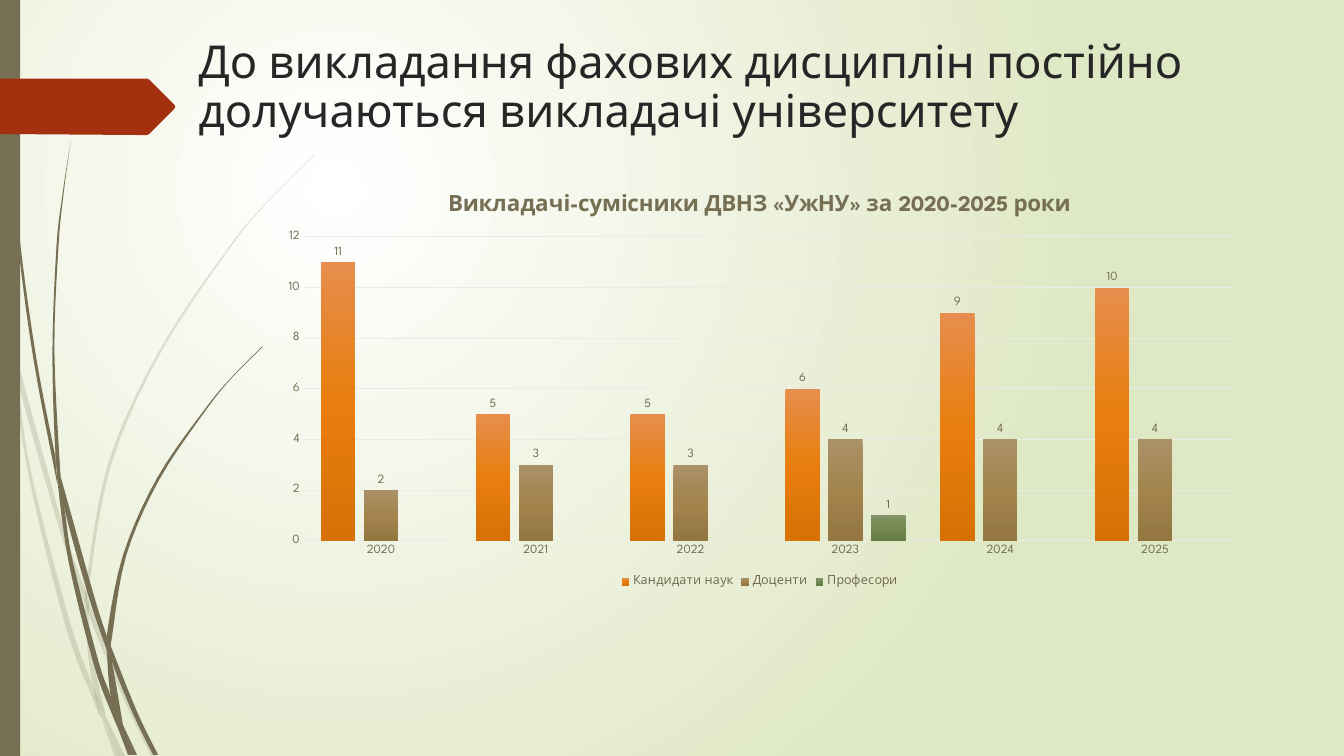
from dataclasses import dataclass

import lxml.etree
import pptx
import pptx.chart.data
import pptx.dml.color
import pptx.enum.chart
import pptx.enum.shapes
import pptx.enum.text
import pptx.oxml
import pptx.oxml.ns
import pptx.util
from pptx.util import Cm, Pt

COLORS = {
    "olive": "766F54",
    "red": "A53010",
    "title": "262626",
    "grid": "ECEAE4",
}
FONT = "League Spartan"
CM_PER_INCH = 2.54
CURVE_STEPS = 5
BACKGROUND_STOPS = {0: "FFFFFF", 100: "DFE8C4"}

Point = tuple[float, float]


@dataclass
class Blade:
    """One piece of a grass blade: its two long edges, in inches, as a loop."""
    outward: list[Point]
    back: list[Point]


@dataclass
class StaffSeries:
    name: str
    values: list[int | None]
    stops: dict[int, str]


PALE_BLADES = [
    Blade([(.11, 3.5), (.09, 3.22), (0, 2.82)], [(0, 2.99), (.1, 3.44), (.11, 3.5)]),
    Blade([(.14, 3.45), (.62, 5.2), (.85, 5.86)], [(.84, 5.99), (.58, 5.22), (.17, 3.76), (.14, 3.45)]),
    Blade([(.88, 5.96), (.92, 6.07), (1.27, 6.92), (1.55, 7.5)],
          [(1.5, 7.5), (1.23, 6.94), (.88, 6.1), (.88, 5.96)]),
    Blade([(1.05, 7.11), (1.24, 7.5)], [(1.19, 7.5), (1.05, 7.11)]),
    Blade([(.11, 3.5), (.17, 3.76), (.31, 4.69), (.7, 6.19), (.93, 6.83), (1.01, 7.14)],
          [(1.01, 7.14), (.92, 6.93), (.65, 6.21), (.28, 4.7), (.11, 3.5)]),
    Blade([(.84, 5.99), (.87, 6.46), (.93, 6.83), (1.05, 7.11)],
          [(1.05, 7.11), (.91, 6.46), (.88, 6.1), (.84, 5.99)]),
    Blade([(.88, 5.96), (.88, 5.84), (1.1, 4.62), (1.6, 3.49), (2.29, 2.45), (2.68, 1.98), (3.12, 1.54)],
          [(3.12, 1.53), (2.68, 1.97), (2.28, 2.44), (1.58, 3.48), (1.07, 4.61), (.85, 5.84), (.88, 5.96)]),
    Blade([(1.01, 7.14), (1.14, 7.5)], [(1.19, 7.5), (1.01, 7.14)]),
    Blade([(.88, 6.1), (.88, 5.96), (.85, 5.86)], [(.84, 5.99), (.88, 6.08)]),
    Blade([(.93, 6.83), (.99, 7.07), (1.19, 7.5)], [(1.19, 7.5), (1.05, 7.11), (.93, 6.83)]),
]
DARK_BLADES = [
    Blade([(.03, 0), (.04, .48), (.07, 1.1), (.17, 2.33), (.33, 3.55), (.57, 4.81)],
          [(.55, 4.53), (.36, 3.55), (.19, 2.32), (.08, 1.09), (.05, .48), (.04, 0)]),
    Blade([(.6, 4.72), (.93, 5.9), (1.06, 6.31)], [(1.06, 6.45), (.88, 5.92), (.64, 5.05), (.6, 4.72)]),
    Blade([(1.1, 6.41), (1.36, 7.06), (1.57, 7.49)], [(1.52, 7.49), (1.32, 7.08), (1.11, 6.56), (1.1, 6.41)]),
    Blade([(.57, 4.77), (.64, 5.05), (.72, 5.56), (.98, 6.57), (1.1, 6.91), (1.17, 7.22)],
          [(1.17, 7.22), (1.11, 7.08), (.93, 6.59), (.68, 5.57), (.57, 4.77)]),
    Blade([(.6, 4.72), (.54, 3.49), (.58, 2.45), (.63, 1.93), (.7, 1.41)],
          [(.7, 1.41), (.62, 1.93), (.56, 2.45), (.52, 3.49), (.55, 4.49), (.6, 4.72)]),
    Blade([(1.22, 7.19), (1.36, 7.49)], [(1.33, 7.49), (1.22, 7.19)]),
    Blade([(.57, 4.77), (.64, 5.05)], [(.6, 4.72), (.55, 4.49), (.57, 4.77)]),
    Blade([(1.1, 6.41), (1.11, 6.33), (1.25, 5.52), (1.58, 4.76), (2.05, 4.06), (2.31, 3.74), (2.61, 3.44)],
          [(2.6, 3.44), (2.31, 3.73), (2.04, 4.05), (1.56, 4.74), (1.22, 5.51), (1.06, 6.31), (1.1, 6.41)]),
    Blade([(1.17, 7.22), (1.27, 7.49)], [(1.31, 7.49), (1.17, 7.22)]),
    Blade([(1.06, 6.45), (1.1, 6.91), (1.22, 7.19)], [(1.22, 7.19), (1.11, 6.56), (1.06, 6.45)]),
    Blade([(1.06, 6.45), (1.11, 6.56), (1.1, 6.41)], [(1.06, 6.31), (1.06, 6.45)]),
    Blade([(1.1, 6.91), (1.17, 7.22), (1.3, 7.49)], [(1.33, 7.49), (1.22, 7.19), (1.1, 6.91)]),
]
ARROW_OUTLINE = [(0, .78), (1.46, .78), (1.48, .79), (1.73, 1.04), (1.74, 1.06),
                 (1.73, 1.08), (1.48, 1.33), (1.46, 1.34), (1.36, 1.34), (0, 1.33)]

YEARS = [str(year) for year in range(2020, 2026)]
STAFF = [
    StaffSeries("Кандидати наук", [11, 5, 5, 6, 9, 10], {0: "E78D4D", 50: "E87E0E", 100: "D77104"}),
    StaffSeries("Доценти", [2, 3, 3, 4, 4, 4], {0: "AB9168", 50: "A3844D", 100: "947641"}),
    StaffSeries("Професори", [None, None, None, 1, None, None], {0: "83946A", 50: "738950", 100: "667C45"}),
]


def rgb(name: str) -> pptx.dml.color.RGBColor:
    return pptx.dml.color.RGBColor.from_string(COLORS[name])


def format_font(font, size: float, color: str, bold: bool = False) -> None:
    font.name, font.size, font.bold = FONT, Pt(size), bold
    font.color.rgb = rgb(color)


def add_child(parent, tag: str, **attributes: str):
    child = lxml.etree.SubElement(parent, pptx.oxml.ns.qn(tag))
    for name, value in attributes.items():
        child.set(name, value)
    return child


def set_gradient(gradient, stops: dict[int, str], circular: bool = False) -> None:
    """Refill a gradFill element, running downwards or out from a centre."""
    for child in list(gradient):
        gradient.remove(child)
    stop_list = add_child(gradient, "a:gsLst")
    for position, color in stops.items():
        add_child(add_child(stop_list, "a:gs", pos=str(position * 1000)), "a:srgbClr", val=color)
    if circular:
        circle = add_child(gradient, "a:path")
        circle.set("path", "circle")
        add_child(circle, "a:fillToRect", l="50000", t="50000", r="100000", b="100000")
    else:
        add_child(gradient, "a:lin", ang="5400000", scaled="0")


def smooth(edge: list[Point]) -> list[Point]:
    """Run a Catmull-Rom curve through the points of an edge."""
    padded = [edge[0], *edge, edge[-1]]
    curve = [edge[0]]
    for a, b, c, d in zip(padded, padded[1:], padded[2:], padded[3:]):
        for step in range(1, CURVE_STEPS + 1):
            t = step / CURVE_STEPS
            curve.append(tuple(
                (2 * q + (r - p) * t + (2 * p - 5 * q + 4 * r - s) * t**2 + (3 * q - p - 3 * r + s) * t**3) / 2
                for p, q, r, s in zip(a, b, c, d)))
    return curve


def paint(shape, color: str, opacity: int = 100) -> None:
    shape.shadow.inherit = False
    shape.fill.solid()
    shape.fill.fore_color.rgb = rgb(color)
    shape.line.fill.background()
    if opacity < 100:
        color_element = shape.element.spPr.find(".//" + pptx.oxml.ns.qn("a:srgbClr"))
        add_child(color_element, "a:alpha", val=str(opacity * 1000))


def add_outline(slide, outline: list[Point], color: str, opacity: int = 100) -> None:
    points = [(Cm(x * CM_PER_INCH), Cm(y * CM_PER_INCH)) for x, y in outline]
    builder = slide.shapes.build_freeform(*points[0])
    builder.add_line_segments(points[1:], close=True)
    paint(builder.convert_to_shape(), color, opacity)


def add_decoration(slide) -> None:
    for blades, opacity in ((PALE_BLADES, 20), (DARK_BLADES, 100)):
        for blade in blades:
            add_outline(slide, smooth(blade.outward) + smooth(blade.back), "olive", opacity)
    stripe = slide.shapes.add_shape(pptx.enum.shapes.MSO_SHAPE.RECTANGLE, 0, 0, Cm(0.51), Cm(19.05))
    paint(stripe, "olive")
    add_outline(slide, ARROW_OUTLINE, "red")


def format_title(title) -> None:
    title.left, title.top, title.width, title.height = Cm(4.75), Cm(0.86), Cm(27.2), Cm(3.56)
    frame = title.text_frame
    frame.text = "До викладання фахових дисциплін постійно долучаються викладачі університету"
    frame.vertical_anchor = pptx.enum.text.MSO_ANCHOR.TOP
    frame.auto_size = pptx.enum.text.MSO_AUTO_SIZE.NONE
    paragraph = frame.paragraphs[0]
    paragraph.alignment = pptx.enum.text.PP_ALIGN.LEFT
    paragraph.line_spacing = 0.9
    format_font(paragraph.runs[0].font, 32.4, "title")


def add_staff_chart(slide) -> None:
    data = pptx.chart.data.CategoryChartData()
    data.categories = YEARS
    for staff in STAFF:
        data.add_series(staff.name, staff.values)
    chart = slide.shapes.add_chart(pptx.enum.chart.XL_CHART_TYPE.COLUMN_CLUSTERED,
                                   Cm(6.76), Cm(4.42), Cm(24.77), Cm(10.49), data).chart
    format_font(chart.font, 9, "olive")
    chart.chart_title.text_frame.text = "Викладачі-сумісники ДВНЗ «УжНУ» за 2020-2025 роки"
    format_font(chart.chart_title.text_frame.paragraphs[0].runs[0].font, 16, "olive", bold=True)
    chart.has_legend = True
    chart.legend.position = pptx.enum.chart.XL_LEGEND_POSITION.BOTTOM
    chart.legend.include_in_layout = False
    format_font(chart.legend.font, 9, "olive")

    for axis in (chart.category_axis, chart.value_axis):
        axis.major_tick_mark = axis.minor_tick_mark = pptx.enum.chart.XL_TICK_MARK.NONE
        format_font(axis.tick_labels.font, 9, "olive")
    chart.value_axis.maximum_scale, chart.value_axis.major_unit = 12, 2
    chart.value_axis.minimum_scale = 0
    chart.value_axis.format.line.fill.background()
    for line in (chart.category_axis.format.line, chart.value_axis.major_gridlines.format.line):
        line.color.rgb, line.width = rgb("grid"), Pt(0.75)

    plot = chart.plots[0]
    plot.gap_width, plot.overlap, plot.vary_by_categories = 100, -24, False
    for series, staff in zip(plot.series, STAFF):
        series.format.fill.gradient()
        gradient = series.format.fill._xPr.find(pptx.oxml.ns.qn("a:gradFill"))
        set_gradient(gradient, staff.stops)
        labels = series.data_labels
        labels.show_value = True
        labels.position = pptx.enum.chart.XL_LABEL_POSITION.OUTSIDE_END
        format_font(labels.font, 9, "olive")

    plot_area = chart.element.find(".//" + pptx.oxml.ns.qn("c:plotArea"))
    for old_layout in plot_area.findall(pptx.oxml.ns.qn("c:layout")):
        plot_area.remove(old_layout)
    layout = add_child(plot_area, "c:layout")
    plot_area.insert(0, layout)
    manual = add_child(layout, "c:manualLayout")
    settings = {"layoutTarget": "inner", "xMode": "edge", "yMode": "edge",
                "x": "0.036", "y": "0.148", "w": "0.945", "h": "0.73"}
    for name, value in settings.items():
        add_child(manual, "c:" + name, val=value)


def main() -> None:
    presentation = pptx.Presentation()
    presentation.slide_width, presentation.slide_height = Cm(33.87), Cm(19.05)
    slide = presentation.slides.add_slide(presentation.slide_layouts[5])
    slide.background.fill.gradient()
    set_gradient(slide.element.find(".//" + pptx.oxml.ns.qn("a:gradFill")), BACKGROUND_STOPS, circular=True)
    add_decoration(slide)
    format_title(slide.shapes.title)
    add_staff_chart(slide)
    presentation.save("out.pptx")


if __name__ == "__main__":
    main()
